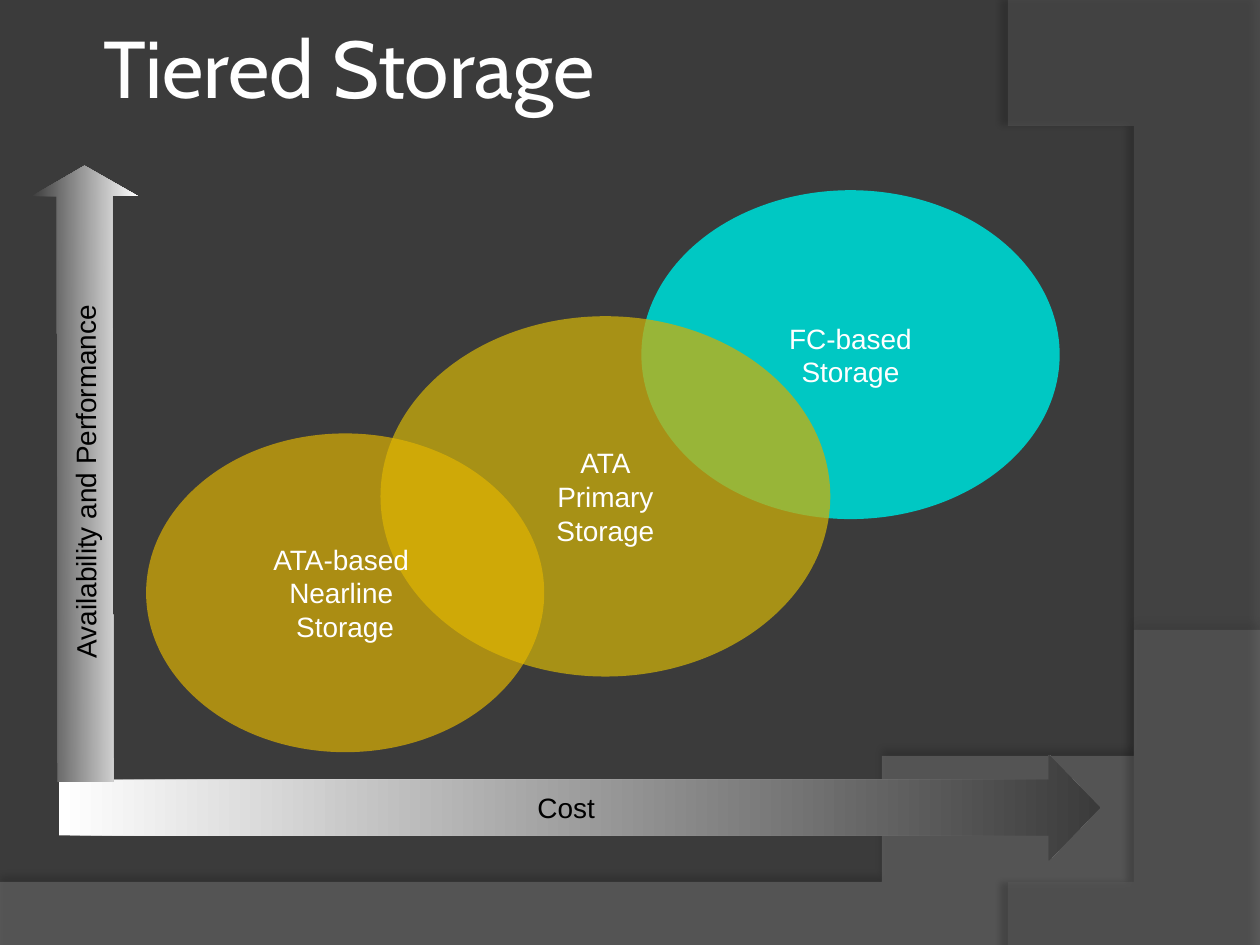
from lxml.etree import SubElement
from pptx import Presentation
from pptx.dml.color import RGBColor
from pptx.enum.shapes import MSO_SHAPE
from pptx.enum.text import MSO_ANCHOR, PP_ALIGN
from pptx.oxml.ns import qn
from pptx.util import Inches, Pt

WIDTH, HEIGHT = 10, 7.5
DARK = RGBColor(0x3B, 0x3B, 0x3B)
WAVE = RGBColor(0x7F, 0x7F, 0x7F)
ARC = RGBColor(0x5E, 0x5E, 0x5E)
TEAL = RGBColor(0x00, 0xC8, 0xC3)
OLIVE = RGBColor(0xCC, 0xAF, 0x0A)
GOLD = RGBColor(0xE3, 0xB6, 0x00)
WHITE = RGBColor(0xFF, 0xFF, 0xFF)
BLACK = RGBColor(0, 0, 0)


def paint(shape, color, alpha=100):
    """Fill without outline; alpha is the opacity in percent."""
    shape.fill.solid()
    shape.fill.fore_color.rgb = color
    shape.line.fill.background()
    if alpha < 100:
        tone = shape._element.spPr.find(qn("a:solidFill"))[0]
        SubElement(tone, qn("a:alpha"), val=str(alpha * 1000))


def cast(shape, alpha, dist, angle):
    """Add a soft black shadow."""
    shape.shadow.inherit = False
    effects = shape._element.spPr.find(qn("a:effectLst"))
    outer = SubElement(effects, qn("a:outerShdw"), blurRad=str(Pt(4)),
                       dist=str(Pt(dist)), dir=str(angle * 60000),
                       algn="ctr", rotWithShape="0")
    tone = SubElement(outer, qn("a:srgbClr"), val=str(BLACK))
    SubElement(tone, qn("a:alpha"), val=str(alpha * 1000))


def curve(a, b, c, d, steps=60):
    """Points along a cubic Bezier curve."""
    points = []
    for i in range(steps + 1):
        t = i / steps
        u = 1 - t
        points.append(tuple(u**3 * p + 3 * u * u * t * q + 3 * u * t * t * r + t**3 * s
                            for p, q, r, s in zip(a, b, c, d)))
    return points


def add_sweep(slide, points, color, alpha, shade):
    form = slide.shapes.build_freeform(*points[0], scale=Inches(1))
    form.add_line_segments(points[1:], close=True)
    shape = form.convert_to_shape()
    paint(shape, color, alpha)
    cast(shape, *shade)


def label(shape, text, color):
    frame = shape.text_frame
    frame.text = text
    frame.word_wrap = False
    frame.vertical_anchor = MSO_ANCHOR.MIDDLE
    for para in frame.paragraphs:
        para.alignment = PP_ALIGN.CENTER
        para.font.name = "Arial"
        para.font.size = Pt(16)
        para.font.color.rgb = color


def add_shape(slide, kind, box, text, color):
    shape = slide.shapes.add_shape(kind, *map(Inches, box))
    shape.shadow.inherit = False
    label(shape, text, color)
    return shape


def add_tier(slide, box, text, color, alpha=100):
    paint(add_shape(slide, MSO_SHAPE.OVAL, box, text, WHITE), color, alpha)


def add_axis(slide, box, text, head, colors, angle=0, turn=0):
    shape = add_shape(slide, MSO_SHAPE.RIGHT_ARROW, box, text, BLACK)
    shape.adjustments[0] = 0.524
    shape.adjustments[1] = head
    shape.rotation = turn
    shape.line.fill.background()
    shape.fill.gradient()
    shape.fill.gradient_angle = angle
    for stop, color in zip(shape.fill.gradient_stops, colors):
        stop.color.rgb = color


def set_title(slide, text):
    title = slide.shapes.title
    title.left, title.top, title.width, title.height = map(Inches, (0.77, 0, 4.64, 1.05))
    frame = title.text_frame
    frame.text = text
    frame.word_wrap = True
    frame.vertical_anchor = MSO_ANCHOR.MIDDLE
    frame.margin_left = frame.margin_right = Inches(0.05)
    frame.margin_top = frame.margin_bottom = Inches(0.05)
    para = frame.paragraphs[0]
    para.alignment = PP_ALIGN.LEFT
    para.font.name = "Cabin"
    para.font.size = Pt(46)
    para.font.color.rgb = WHITE


def main():
    deck = Presentation()
    deck.slide_width, deck.slide_height = Inches(WIDTH), Inches(HEIGHT)
    slide = deck.slides.add_slide(deck.slide_layouts[5])
    slide.background.fill.solid()
    slide.background.fill.fore_color.rgb = DARK

    wave = curve((WIDTH, 5.2), (5.59, 7.29), (3.91, 7.19), (0, 7.05))
    add_sweep(slide, [(0, HEIGHT), (WIDTH, HEIGHT)] + wave, WAVE, 45, (35, 3.5, 270))
    arc = curve((8.21, HEIGHT), (9.35, 6.19), (10.18, 3), (8, 0))
    add_sweep(slide, [(WIDTH, 0.02), (WIDTH, HEIGHT)] + arc, ARC, 40, (45, 4, 180))

    set_title(slide, "Tiered Storage")
    add_tier(slide, (5.09, 1.51, 3.32, 2.61), "FC-based\vStorage", TEAL)
    add_axis(slide, (0.47, 5.99, 8.26, 0.84), "Cost", 0.483, (WHITE, DARK))
    add_tier(slide, (3.02, 2.51, 3.57, 2.86), "ATA\vPrimary\vStorage", OLIVE, 75)
    add_tier(slide, (1.16, 3.44, 3.16, 2.53), "ATA-based \nNearline \nStorage", GOLD, 67)
    add_axis(slide, (-1.77, 3.34, 4.89, 0.84), "Availability and Performance",
             0.286, (DARK, WHITE), angle=270, turn=269.9)
    deck.save("out.pptx")


if __name__ == "__main__":
    main()
